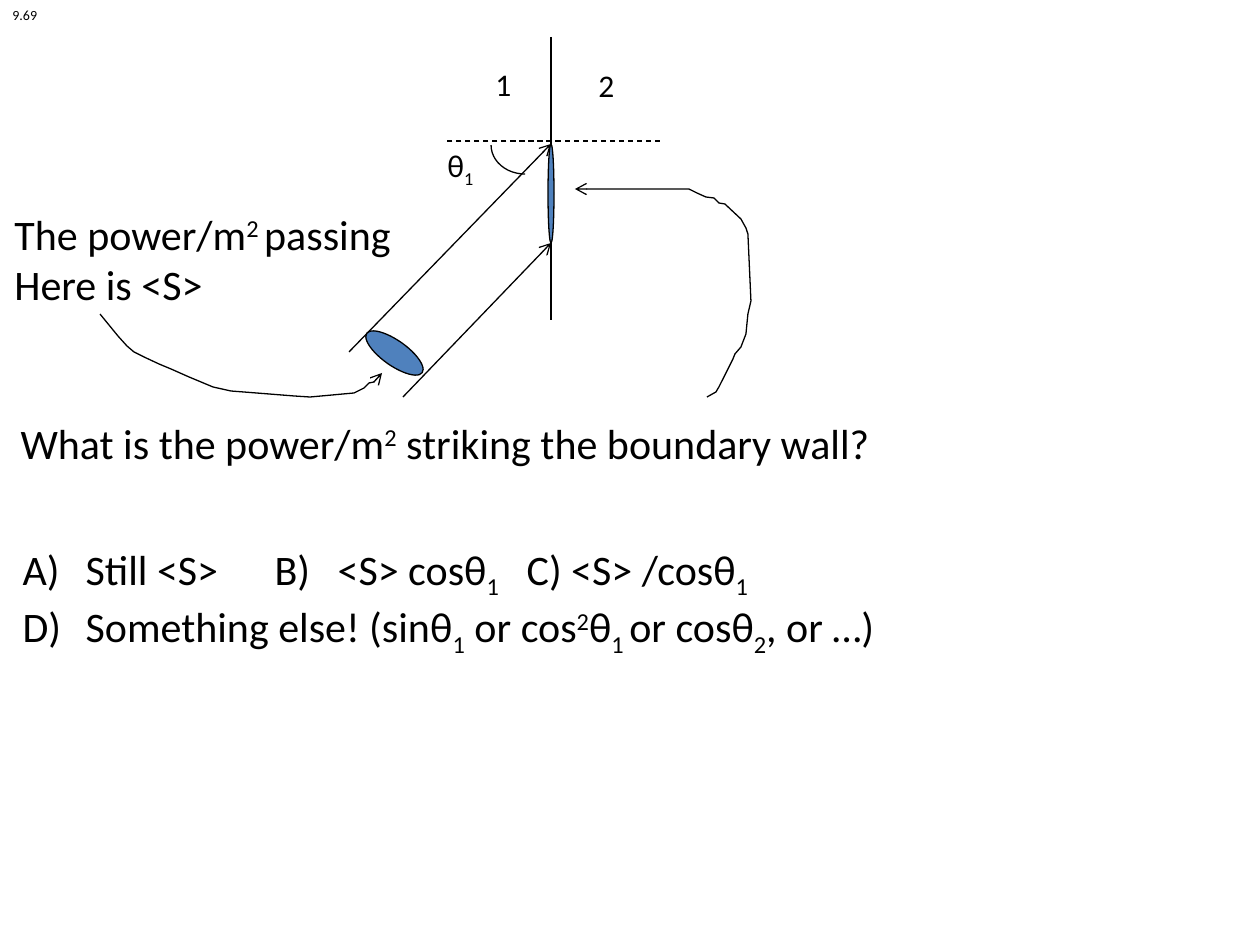
from dataclasses import dataclass

from lxml import etree
from pptx import Presentation
from pptx import util as u
from pptx.dml.color import RGBColor
from pptx.enum import dml, shapes, text
from pptx.oxml import ns

PX = 914400 / 126
SUB, SUP = -25000, 30000


@dataclass
class Theme:
    font: str = "Calibri"
    ink: RGBColor = RGBColor(0x00, 0x00, 0x00)
    beam: RGBColor = RGBColor(0x4F, 0x81, 0xBD)
    body: int = 24
    label: int = 18
    number: int = 8
    line: float = 0.75


def px(value):
    return u.Emu(round(value * PX))


class Page:
    def __init__(self, slide, theme):
        self.slide = slide
        self.theme = theme

    def fill_text(self, box, lines, size, wrap):
        frame = box.text_frame
        frame.auto_size = text.MSO_AUTO_SIZE.NONE
        frame.word_wrap = wrap
        frame.vertical_anchor = text.MSO_ANCHOR.TOP
        for index, runs in enumerate(lines):
            paragraph = frame.add_paragraph() if index else frame.paragraphs[0]
            paragraph.alignment = text.PP_ALIGN.LEFT
            paragraph.space_before = u.Pt(0)
            for words, shift in runs:
                run = paragraph.add_run()
                run.text = words
                run.font.name = self.theme.font
                run.font.size = u.Pt(size)
                run.font.color.rgb = self.theme.ink
                if shift:
                    run.font._element.set("baseline", str(shift))

    def place(self, box, left, top, width, height):
        box.left, box.top, box.width, box.height = map(px, (left, top, width, height))

    def title(self, area, runs):
        heading = self.slide.shapes.title
        self.place(heading, *area)
        self.fill_text(heading, [runs], self.theme.body, True)

    def choices(self, area, lines, stops):
        answers = self.slide.placeholders[1]
        self.place(answers, *area)
        self.fill_text(answers, lines, self.theme.body, True)
        for paragraph, positions in zip(answers.text_frame.paragraphs, stops):
            props = paragraph._p.get_or_add_pPr()
            props.set("marL", "0")
            props.set("indent", "0")
            etree.SubElement(props, ns.qn("a:buNone"))
            tabs = etree.SubElement(props, ns.qn("a:tabLst"))
            for position in positions:
                etree.SubElement(tabs, ns.qn("a:tab"), pos=str(px(position)), algn="l")

    def label(self, area, lines, size):
        box = self.slide.shapes.add_textbox(*map(px, area))
        self.fill_text(box, lines, size, False)

    def stroke(self, item, arrow=False, dashed=False):
        item.line.color.rgb = self.theme.ink
        item.line.width = u.Pt(self.theme.line)
        if dashed:
            item.line.dash_style = dml.MSO_LINE.DASH
        if arrow:
            etree.SubElement(item.line._get_or_add_ln(), ns.qn("a:tailEnd"), type="arrow")

    def line(self, start, end, **style):
        ray = self.slide.shapes.add_connector(
            shapes.MSO_CONNECTOR.STRAIGHT, *map(px, start + end))
        self.stroke(ray, **style)
        etree.SubElement(ray._element.spPr, ns.qn("a:effectLst"))

    def shape(self, kind, area, fill=None, rotation=0):
        figure = self.slide.shapes.add_shape(kind, *map(px, area))
        figure.rotation = rotation
        figure.shadow.inherit = False
        if fill is None:
            figure.fill.background()
        else:
            figure.fill.solid()
            figure.fill.fore_color.rgb = fill
        self.stroke(figure)

    def pointer(self, points):
        builder = self.slide.shapes.build_freeform(*points[0], scale=PX)
        builder.add_line_segments(points[1:], close=False)
        trail = builder.convert_to_shape()
        trail.fill.background()
        trail.shadow.inherit = False
        self.stroke(trail, arrow=True)


def main():
    deck = Presentation()
    deck.slide_width, deck.slide_height = u.Inches(10), u.Inches(7.5)
    theme = Theme()
    page = Page(deck.slides.add_slide(deck.slide_layouts[1]), theme)

    page.title((8, 411, 1211, 63), [
        ("What is the power/m", 0), ("2", SUP), (" striking the boundary wall?", 0)])
    page.choices((10, 537, 1213, 152), [
        [("A)\tStill <S>\tB)\t<S> cosθ", 0), ("1", SUB), ("\tC) <S> /cosθ", 0), ("1", SUB)],
        [("D)\tSomething else! (sinθ", 0), ("1", SUB), (" or cos", 0), ("2", SUP),
         ("θ", 0), ("1 ", SUB), ("or cosθ", 0), ("2", SUB), (", or …)", 0)],
    ], [(63, 281, 346, 592), (58,)])

    page.line((551, 37), (551, 320))
    page.line((349, 352), (551, 144), arrow=True)
    page.line((660, 141), (445, 141), dashed=True)
    page.label((483, 59, 43, 50), [[("1", 0)]], theme.label)
    page.label((586, 60, 43, 50), [[("2", 0)]], theme.label)
    page.shape(shapes.MSO_SHAPE.ARC, (491, 116, 68, 58), rotation=180)
    page.label((435, 140, 62, 50), [[("θ", 0), ("1", SUB)]], theme.label)
    page.label((2, 202, 446, 115), [
        [("The power/m", 0), ("2 ", SUP), ("passing", 0)],
        [("Here is <S>", 0)]], theme.body)
    page.shape(shapes.MSO_SHAPE.OVAL, (382, 319, 25, 68), theme.beam, rotation=305.3)
    page.line((403, 397), (551, 243), arrow=True)
    page.pointer([
        (100, 314), (118, 336), (127, 346), (134, 352), (144, 357), (159, 364),
        (171, 369), (189, 377), (213, 387), (231, 391), (244, 392), (294, 396),
        (310, 397), (354, 393), (364, 388), (369, 383), (374, 382), (377, 377),
        (382, 373)])
    page.shape(shapes.MSO_SHAPE.OVAL, (548, 144, 6, 99), theme.beam)
    page.pointer([
        (707, 397), (716, 392), (719, 387), (726, 373), (733, 359), (735, 354),
        (741, 347), (746, 334), (748, 314), (751, 301), (748, 234), (746, 228),
        (741, 219), (725, 204), (719, 203), (714, 198), (706, 197), (697, 193),
        (689, 189), (575, 189)])
    page.label((0, 0, 50, 30), [[("9.69", 0)]], theme.number)

    deck.save("out.pptx")


if __name__ == "__main__":
    main()
